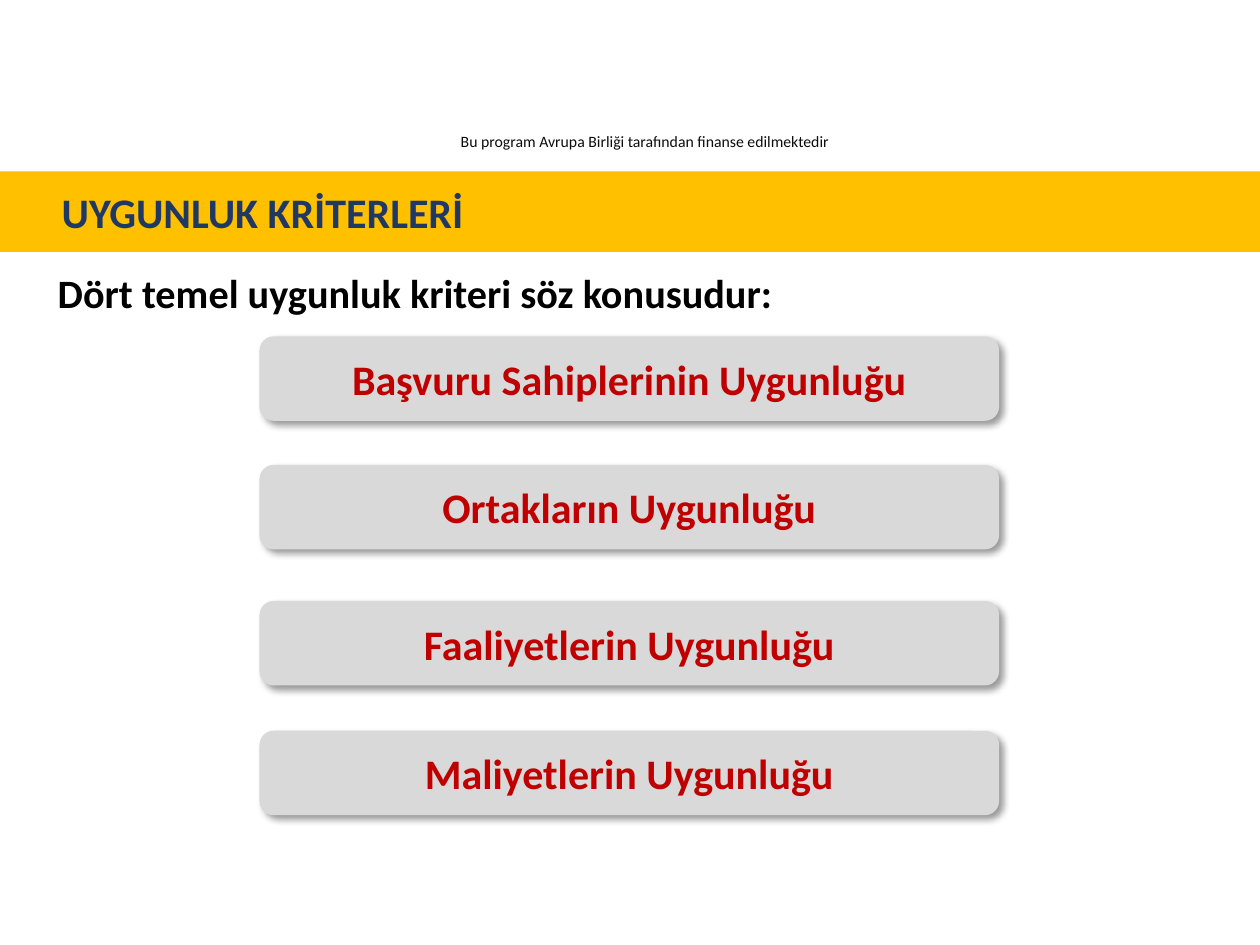
from lxml.etree import SubElement
from pptx import Presentation
from pptx.dml.color import RGBColor
from pptx.enum.shapes import MSO_SHAPE as Shape
from pptx.enum.text import MSO_ANCHOR as Anchor, PP_ALIGN as Align
from pptx.oxml.ns import qn
from pptx.util import Inches, Pt

AMBER = RGBColor(0xFF, 0xC0, 0x00)
NAVY = RGBColor(0x20, 0x38, 0x64)
GREY = RGBColor(0xD9, 0xD9, 0xD9)
RED = RGBColor(0xC0, 0x00, 0x00)
BLACK = RGBColor(0x00, 0x00, 0x00)
NEAR_BLACK = RGBColor(0x0D, 0x0D, 0x0D)

FUNDING = "Bu program Avrupa Birliği tarafından finanse edilmektedir "
TITLE = "UYGUNLUK KRİTERLERİ"
INTRO = "Dört temel uygunluk kriteri söz konusudur:"
CRITERIA = [
    ("Başvuru Sahiplerinin Uygunluğu", 2.67),
    ("Ortakların Uygunluğu", 3.69),
    ("Faaliyetlerin Uygunluğu", 4.77),
    ("Maliyetlerin Uygunluğu", 5.8),
]
CRITERION_LEFT, CRITERION_WIDTH, CRITERION_HEIGHT = 2.06, 5.87, 0.67


def write(holder, text, size, color, bold=True, align=Align.LEFT, **frame_format):
    frame = holder.text_frame
    for name, value in {"word_wrap": True, **frame_format}.items():
        setattr(frame, name, value)
    paragraph = frame.paragraphs[0]
    paragraph.alignment = align
    run = paragraph.add_run()
    run.text = text
    for name, value in {"name": "Calibri", "size": Pt(size), "bold": bold}.items():
        setattr(run.font, name, value)
    run.font.color.rgb = color


def add_panel(slide, kind, box, fill):
    panel = slide.shapes.add_shape(kind, *map(Inches, box))
    panel.shadow.inherit = False
    panel.fill.solid()
    panel.fill.fore_color.rgb = fill
    panel.line.fill.background()
    return panel


def add_drop_shadow(panel):
    effects = panel.element.spPr.find(qn("a:effectLst"))
    shadow = SubElement(effects, qn("a:outerShdw"), blurRad=str(Pt(4)),
                        dist=str(Pt(3)), dir=str(45 * 60000),
                        algn="tl", rotWithShape="0")
    color = SubElement(shadow, qn("a:srgbClr"), val=str(BLACK))
    SubElement(color, qn("a:alpha"), val="40000")


def main():
    deck = Presentation()
    deck.slide_width, deck.slide_height = Inches(10), Inches(7.5)
    slide = deck.slides.add_slide(deck.slide_layouts[6])

    funding = slide.shapes.add_textbox(*map(Inches, (2.79, 1, 4.68, 0.25)))
    write(funding, FUNDING, 9, NEAR_BLACK, bold=False, align=Align.CENTER)

    banner = add_panel(slide, Shape.RECTANGLE, (0, 1.36, 10, 0.64), AMBER)
    write(banner, TITLE, 24, NAVY, vertical_anchor=Anchor.TOP,
          margin_left=Inches(0.49), margin_top=Inches(0.12),
          margin_bottom=Inches(0.12))

    for criterion, top in CRITERIA:
        box = (CRITERION_LEFT, top, CRITERION_WIDTH, CRITERION_HEIGHT)
        panel = add_panel(slide, Shape.ROUNDED_RECTANGLE, box, GREY)
        add_drop_shadow(panel)
        write(panel, criterion, 24, RED, align=Align.CENTER,
              vertical_anchor=Anchor.MIDDLE)

    intro = slide.shapes.add_textbox(*map(Inches, (0.36, 2.08, 9, 0.49)))
    write(intro, INTRO, 23, BLACK)

    deck.save("out.pptx")


if __name__ == "__main__":
    main()
